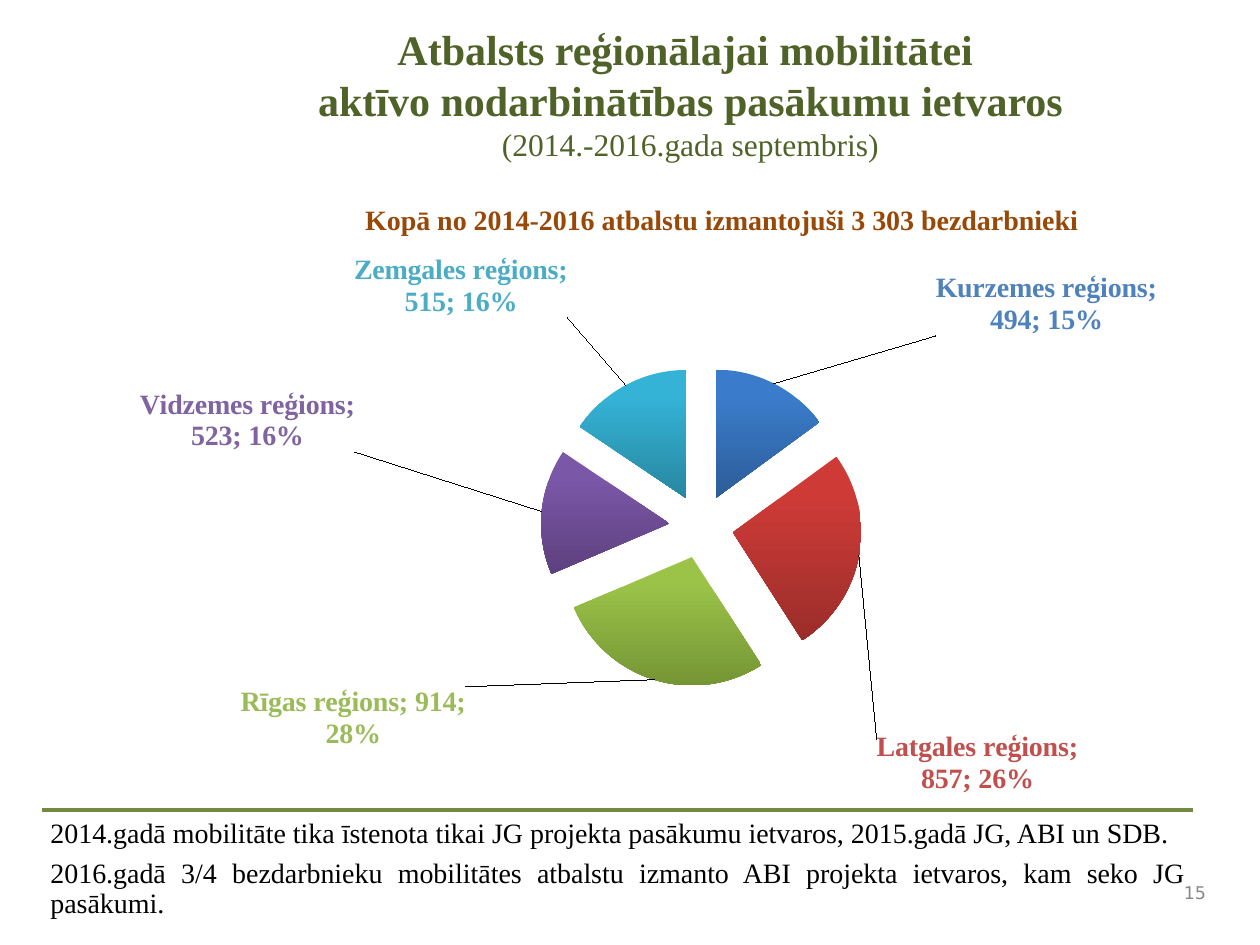
from lxml import etree
from pptx import Presentation
from pptx.chart.data import CategoryChartData
from pptx.dml.color import RGBColor
from pptx.enum.chart import XL_CHART_TYPE
from pptx.enum.shapes import MSO_CONNECTOR
from pptx.enum.text import MSO_ANCHOR, MSO_AUTO_SIZE, PP_ALIGN
from pptx.oxml import parse_xml
from pptx.oxml.ns import nsdecls, qn
from pptx.util import Inches, Pt

PIE = XL_CHART_TYPE.PIE
STRAIGHT = MSO_CONNECTOR.STRAIGHT
TOP, MIDDLE = MSO_ANCHOR.TOP, MSO_ANCHOR.MIDDLE
NO_FIT = MSO_AUTO_SIZE.NONE
LEFT, CENTER = PP_ALIGN.LEFT, PP_ALIGN.CENTER
RIGHT, JUSTIFY = PP_ALIGN.RIGHT, PP_ALIGN.JUSTIFY

SERIF, SANS = "Times New Roman", "DejaVu Sans"
COLORS = {
    "title": "4F6228", "total": "984807", "text": "000000",
    "rule": "738A42", "number": "898989",
}

# Region, people, label colour, gradient top and bottom, label offset (chart fractions)
REGIONS = [
    ("Kurzemes reģions", 494, "4F81BD", "3A7CCB", "2C5D98", (0.136, -0.065)),
    ("Latgales reģions", 857, "C0504D", "CE3B37", "9B2D2A", (0.009, 0.288)),
    ("Rīgas reģions", 914, "9BBB59", "9BC348", "769535", (-0.16, 0)),
    ("Vidzemes reģions", 523, "8064A2", "7B57A8", "5D417E", (-0.154, -0.093)),
    ("Zemgales reģions", 515, "4BACC6", "34B3D6", "2787A0", (-0.047, -0.096)),
]

SHOW = ('<c:dLblPos val="outEnd"/><c:showLegendKey val="0"/><c:showVal val="1"/>'
        '<c:showCatName val="1"/><c:showSerName val="0"/><c:showPercent val="1"/>'
        '<c:showBubbleSize val="0"/><c:separator>; </c:separator>')


def rgb(value):
    return RGBColor.from_string(value)


def place(shape, x, y, w, h):
    shape.left, shape.top = Inches(x), Inches(y)
    shape.width, shape.height = Inches(w), Inches(h)


def write(tf, lines, color, align=LEFT, font=SERIF, anchor=TOP):
    """Write (text, size, bold) lines, one paragraph each."""
    tf.word_wrap, tf.auto_size, tf.vertical_anchor = True, NO_FIT, anchor
    for i, (text, size, bold) in enumerate(lines):
        p = tf.paragraphs[0] if i == 0 else tf.add_paragraph()
        p.alignment = align
        r = p.add_run()
        r.text = text
        r.font.name, r.font.size, r.font.bold = font, Pt(size), bold
        r.font.color.rgb = rgb(COLORS[color])


def add_text(s, box, lines, color, **style):
    tf = s.shapes.add_textbox(*map(Inches, box)).text_frame
    write(tf, lines, color, **style)
    return tf


def add_rule(s, x1, x2, y):
    line = s.shapes.add_connector(
        STRAIGHT, Inches(x1), Inches(y), Inches(x2), Inches(y))
    line.line.color.rgb, line.line.width = rgb(COLORS["rule"]), Pt(2)
    etree.SubElement(line._element.spPr, qn("a:effectLst"))


def label_xml(i, color, offset):
    return (f'<c:dLbl><c:idx val="{i}"/><c:layout><c:manualLayout>'
            f'<c:x val="{offset[0]}"/><c:y val="{offset[1]}"/>'
            '</c:manualLayout></c:layout><c:spPr><a:noFill/></c:spPr>'
            '<c:txPr><a:bodyPr/><a:p><a:pPr><a:defRPr sz="1600" b="1">'
            f'<a:solidFill><a:srgbClr val="{color}"/></a:solidFill>'
            f'<a:latin typeface="{SERIF}"/></a:defRPr></a:pPr>'
            f'<a:endParaRPr lang="lv-LV"/></a:p></c:txPr>{SHOW}</c:dLbl>')


def add_pie(s, box):
    data = CategoryChartData()
    data.categories = [region[0] for region in REGIONS]
    data.add_series("Series 1", [region[1] for region in REGIONS])
    chart = s.shapes.add_chart(PIE, *map(Inches, box), data).chart
    chart.has_title = chart.has_legend = False
    chart.font.name, chart.font.size = SERIF, Pt(10)
    chart.font.color.rgb = rgb(COLORS["text"])
    plot = chart.plots[0]
    plot.vary_by_categories = True
    series = plot.series[0]

    # Slices pulled apart, with labels and leader lines
    labels = "".join(label_xml(i, region[2], region[5])
                     for i, region in enumerate(REGIONS))
    cat = series._element.find(qn("c:cat"))
    cat.addprevious(parse_xml(f'<c:explosion {nsdecls("c")} val="25"/>'))
    cat.addprevious(parse_xml(
        f'<c:dLbls {nsdecls("c", "a")}>{labels}{SHOW}'
        '<c:showLeaderLines val="1"/></c:dLbls>'))

    # Vertical gradients
    for i, region in enumerate(REGIONS):
        fill = series.points[i].format.fill
        fill.gradient()
        fill.gradient_angle = 270
        for stop, color, pos in zip(fill.gradient_stops, region[3:5], (0.2, 1)):
            stop.color.rgb, stop.position = rgb(color), pos

    # Plot area position
    area = chart._chartSpace.chart.plotArea
    for old in area.findall(qn("c:layout")):
        area.remove(old)
    area.insert(0, parse_xml(
        f'<c:layout {nsdecls("c")}><c:manualLayout>'
        '<c:layoutTarget val="inner"/><c:xMode val="edge"/><c:yMode val="edge"/>'
        '<c:x val="0.317"/><c:y val="0.322"/><c:w val="0.522"/><c:h val="0.507"/>'
        '</c:manualLayout></c:layout>'))


def main():
    prs = Presentation()
    prs.slide_width, prs.slide_height = Inches(10), Inches(7.5)
    s = prs.slides.add_slide(prs.slide_layouts[5])

    # Title
    title = s.shapes.title
    place(title, 1.2, 0.14, 8.56, 1.21)
    write(title.text_frame, [
        ("Atbalsts reģionālajai mobilitātei ", 24, True),
        ("aktīvo nodarbinātības pasākumu ietvaros", 24, True),
        ("(2014.-2016.gada septembris)", 18, False),
    ], "title", align=CENTER)

    # Regions and total
    add_pie(s, (0.22, 1.29, 9.25, 5.02))
    add_text(s, (2.8, 1.56, 7.2, 0.64), [
        ("Kopā no 2014-2016 atbalstu izmantojuši 3 303 bezdarbnieki", 16, True),
    ], "total")

    # Remarks under a rule
    add_rule(s, 0.33, 9.47, 6.43)
    tf = add_text(s, (0.33, 6.43, 9.15, 0.96), [
        ("2014.gadā mobilitāte tika īstenota tikai JG projekta pasākumu "
         "ietvaros, 2015.gadā JG, ABI un SDB.", 16, False),
        ("2016.gadā 3/4 bezdarbnieku mobilitātes atbalstu izmanto ABI projekta "
         "ietvaros, kam seko JG pasākumi.", 16, False),
    ], "text", align=JUSTIFY)
    tf.margin_left = tf.margin_right = tf.margin_top = tf.margin_bottom = Inches(0.07)
    for p in tf.paragraphs:
        p.line_spacing, p.space_after = 0.9, Pt(5.6)

    # Slide number
    add_text(s, (9.16, 6.92, 0.51, 0.33), [("15", 10, False)], "number",
             align=RIGHT, font=SANS, anchor=MIDDLE)
    prs.save("out.pptx")


if __name__ == "__main__":
    main()
